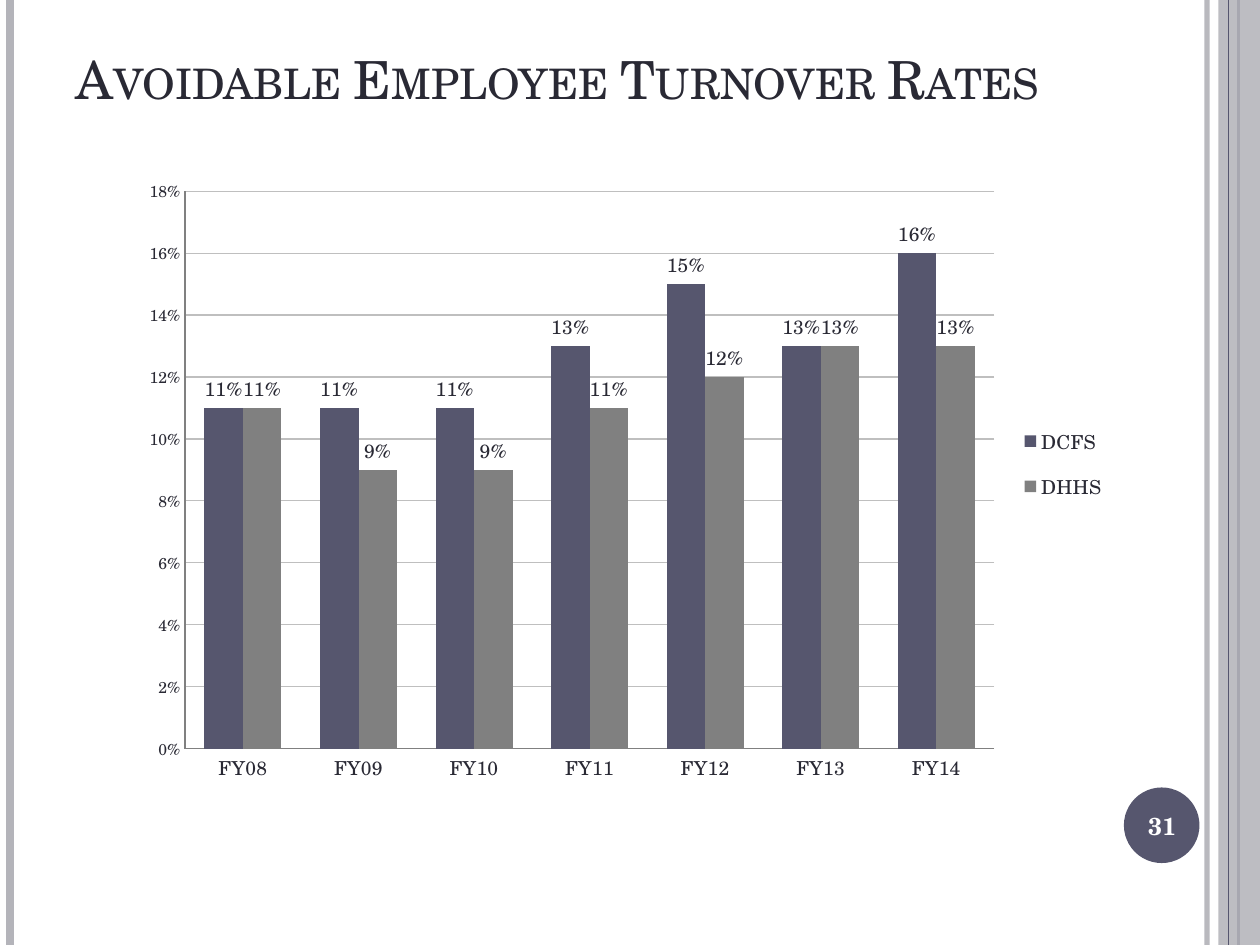
from dataclasses import dataclass

from lxml import etree
from pptx import Presentation
from pptx import util as u
from pptx.chart.data import CategoryChartData
from pptx.dml.color import RGBColor
from pptx.enum import chart as ch, dml, shapes, text
from pptx.oxml import ns

FONT = "TeX Gyre Schola"
INK = RGBColor(0x29, 0x29, 0x34)
SLATE = RGBColor(0x56, 0x56, 0x6E)
SILVER = RGBColor(0xB4, 0xB4, 0xBA)
GRAY = RGBColor(0x80, 0x80, 0x80)
GRID = RGBColor(0xBF, 0xBF, 0xBF)
WHITE = RGBColor(0xFF, 0xFF, 0xFF)


@dataclass
class Rule:
    x: float
    color: RGBColor
    width: float
    opacity: int = 100


@dataclass
class Series:
    name: str
    rates: tuple[float, ...]
    color: RGBColor


BACK_RULES = [Rule(9.58, SILVER, 3, 93), Rule(0.08, SILVER, 4.5), Rule(9.83, SLATE, 1.5)]
FRONT_RULE = Rule(9.75, SLATE, 0.75)
YEARS = [f"FY{year:02d}" for year in range(8, 15)]
SERIES = [
    Series("DCFS", (0.11, 0.11, 0.11, 0.13, 0.15, 0.13, 0.16), SLATE),
    Series("DHHS", (0.11, 0.09, 0.09, 0.11, 0.12, 0.13, 0.13), GRAY),
]


def inches(*lengths: float) -> list:
    return [u.Inches(length) for length in lengths]


def set_opacity(fill, percent: int) -> None:
    """Make a solid fill element's colour partly transparent."""
    color = fill.find(ns.qn("a:srgbClr"))
    etree.SubElement(color, ns.qn("a:alpha"), val=str(percent * 1000))


def draw_rule(page, rule: Rule) -> None:
    line = page.shapes.add_connector(
        shapes.MSO_CONNECTOR.STRAIGHT, *inches(rule.x, 0, rule.x, 7.5))
    line.line.color.rgb = rule.color
    line.line.width = u.Pt(rule.width)
    properties = line._element.spPr
    if rule.opacity < 100:
        set_opacity(properties.find(".//" + ns.qn("a:solidFill")), rule.opacity)
    etree.SubElement(properties, ns.qn("a:effectLst"))


def draw_shape(page, kind, place: tuple, color: RGBColor):
    shape = page.shapes.add_shape(kind, *inches(*place))
    shape.shadow.inherit = False
    shape.fill.solid()
    shape.fill.fore_color.rgb = color
    shape.line.fill.background()
    return shape


def style_font(font, size: float, color: RGBColor = INK, bold: bool = False) -> None:
    font.name = FONT
    font.size = u.Pt(size)
    font.color.rgb = color
    font.bold = bold


def write(box, words: str, anchor, align):
    """Put one run in a box and return it for styling."""
    frame = box.text_frame
    frame.word_wrap = True
    frame.auto_size = text.MSO_AUTO_SIZE.NONE
    frame.vertical_anchor = anchor
    para = frame.paragraphs[0]
    para.alignment = align
    span = para.add_run()
    span.text = words
    return span


def set_layout(parent, index: int, x: float, y: float, w: float, h: float, inner: bool = False) -> None:
    """Fix a chart part's place, in fractions of the chart's size."""
    for old in parent.findall(ns.qn("c:layout")):
        parent.remove(old)
    layout = etree.Element(ns.qn("c:layout"))
    manual = etree.SubElement(layout, ns.qn("c:manualLayout"))
    settings = [("layoutTarget", "inner")] if inner else []
    settings += [("xMode", "edge"), ("yMode", "edge"), ("x", x), ("y", y), ("w", w), ("h", h)]
    for tag, value in settings:
        etree.SubElement(manual, ns.qn(f"c:{tag}"), val=str(value))
    parent.insert(index, layout)


def draw_chart(page) -> None:
    table = CategoryChartData(number_format="0%")
    table.categories = YEARS
    for series in SERIES:
        table.add_series(series.name, series.rates)
    chart = page.shapes.add_chart(
        ch.XL_CHART_TYPE.COLUMN_CLUSTERED, *inches(1, 1.32, 7.83, 4.97), table).chart
    chart.has_title = False
    style_font(chart.font, 11)

    plot = chart.plots[0]
    plot.gap_width = 100
    plot.overlap = 0
    plot.vary_by_categories = False
    for drawn, series in zip(plot.series, SERIES):
        drawn.format.fill.solid()
        drawn.format.fill.fore_color.rgb = series.color
        labels = drawn.data_labels
        labels.show_value = True
        labels.number_format = "0%"
        labels.number_format_is_linked = False
        labels.position = ch.XL_LABEL_POSITION.OUTSIDE_END
        style_font(labels.font, 11)

    for axis, size in ((chart.category_axis, 11), (chart.value_axis, 9)):
        axis.major_tick_mark = axis.minor_tick_mark = ch.XL_TICK_MARK.NONE
        axis.format.line.color.rgb = GRAY
        axis.format.line.width = u.Pt(1)
        style_font(axis.tick_labels.font, size)
    rates = chart.value_axis
    rates.minimum_scale, rates.maximum_scale, rates.major_unit = 0, 0.18, 0.02
    rates.tick_labels.number_format = "0%"
    rates.tick_labels.number_format_is_linked = False
    rates.major_gridlines.format.line.color.rgb = GRID
    rates.major_gridlines.format.line.width = u.Pt(0.75)

    chart.has_legend = True
    legend = chart.legend
    legend.position = ch.XL_LEGEND_POSITION.RIGHT
    legend.include_in_layout = False
    style_font(legend.font, 11)
    set_layout(legend._element, 1, 0.9, 0.39, 0.1, 0.17)
    set_layout(chart._chartSpace.chart.plotArea, 0, 0.06, 0.04, 0.82, 0.89, inner=True)


def main() -> None:
    deck = Presentation()
    deck.slide_width, deck.slide_height = inches(10, 7.5)
    page = deck.slides.add_slide(deck.slide_layouts[5])
    page.background.fill.solid()
    page.background.fill.fore_color.rgb = WHITE

    for rule in BACK_RULES:
        draw_rule(page, rule)
    band = draw_shape(page, shapes.MSO_SHAPE.RECTANGLE, (9.67, 0, 0.33, 7.5), SILVER)
    set_opacity(band._element.spPr.find(ns.qn("a:solidFill")), 87)
    draw_rule(page, FRONT_RULE)
    draw_shape(page, shapes.MSO_SHAPE.OVAL, (8.92, 6.25, 0.6, 0.6), SLATE)

    title = page.shapes.title
    title.left, title.top, title.width, title.height = inches(0.5, 0.3, 8.17, 0.62)
    span = write(title, "Avoidable Employee Turnover Rates",
                 text.MSO_ANCHOR.BOTTOM, text.PP_ALIGN.LEFT)
    style_font(span.font, 30)
    span._r.get_or_add_rPr().set("cap", "small")

    draw_chart(page)

    number = page.shapes.add_textbox(*inches(8.89, 6.27, 0.67, 0.57))
    span = write(number, "31", text.MSO_ANCHOR.MIDDLE, text.PP_ALIGN.CENTER)
    style_font(span.font, 14, WHITE, bold=True)

    deck.save("out.pptx")


if __name__ == "__main__":
    main()
